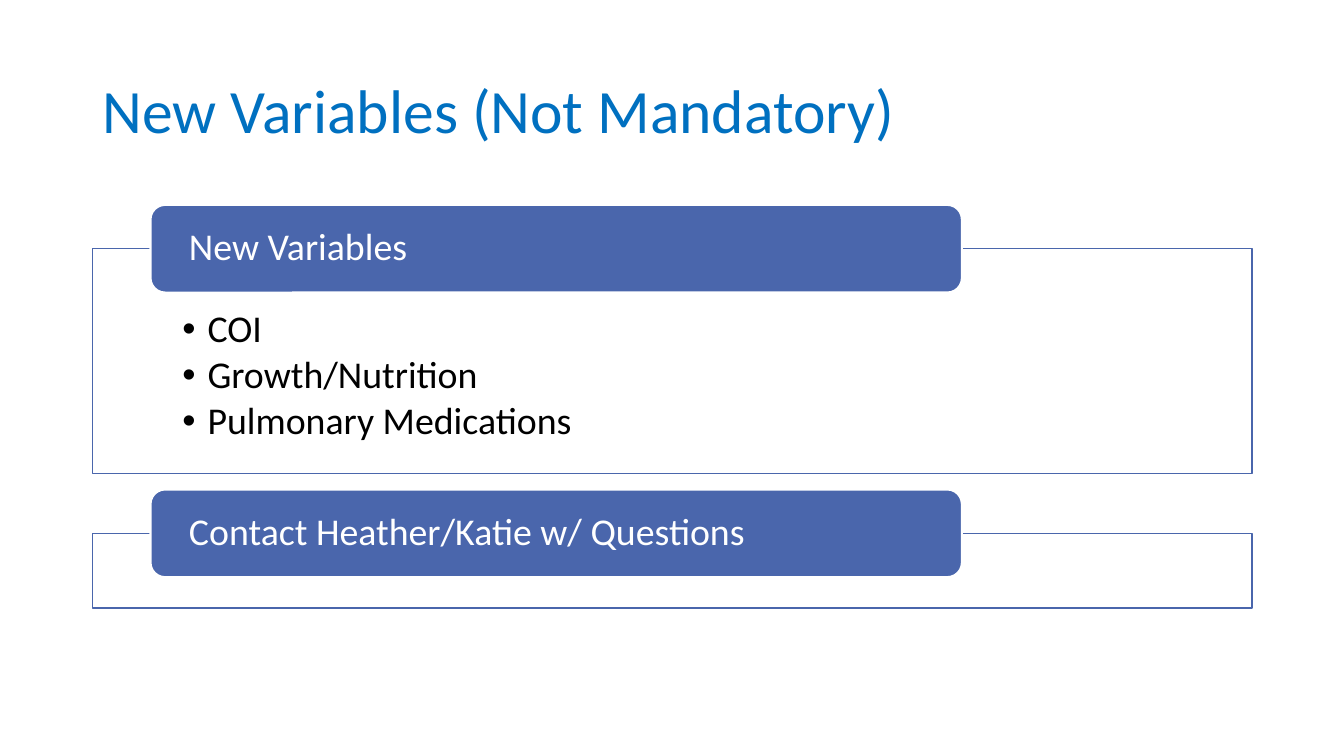
"""Build the slide that lists the new, optional variables."""
from lxml.etree import SubElement
from pptx import Presentation
from pptx.dml.color import RGBColor
from pptx.enum.shapes import MSO_SHAPE
from pptx.enum.text import MSO_ANCHOR, PP_ALIGN
from pptx.oxml.ns import qn
from pptx.util import Inches, Pt

BLUE = RGBColor(0x4A, 0x66, 0xAC)
SKY = RGBColor(0x00, 0x70, 0xC0)
WHITE = RGBColor(0xFF, 0xFF, 0xFF)
BLACK = RGBColor(0x00, 0x00, 0x00)

deck = Presentation()
deck.slide_width, deck.slide_height = Inches(13.33), Inches(7.5)
col, row = deck.slide_width / 100, deck.slide_height / 100
slide = deck.slides.add_slide(deck.slide_layouts[6])


def write(shape, lines, size=27, color=BLACK, anchor=MSO_ANCHOR.MIDDLE,
          left=0.75, top=0, after=0, bullet=False):
    frame = shape.text_frame
    frame.word_wrap = True
    frame.vertical_anchor = anchor
    frame.margin_left = frame.margin_right = int(left * col)
    frame.margin_top = frame.margin_bottom = int(top * row)
    for i, line in enumerate(lines):
        para = frame.paragraphs[0] if i == 0 else frame.add_paragraph()
        para.alignment = PP_ALIGN.LEFT
        para.line_spacing = 0.9
        para.space_after = Pt(after)
        if bullet:
            props = para._p.get_or_add_pPr()
            props.set("marL", str(Inches(0.25)))
            props.set("indent", str(-Inches(0.25)))
            SubElement(props, qn("a:buFont"), typeface="Arial")
            SubElement(props, qn("a:buChar"), char="•")
        run = para.add_run()
        run.text = line
        run.font.name = "Calibri"
        run.font.size = Pt(size)
        run.font.color.rgb = color


def block(kind, x, y, wide, high, fill, line, weight):
    shape = slide.shapes.add_shape(
        kind, int(x * col), int(y * row), int(wide * col), int(high * row))
    shape.shadow.inherit = False
    shape.fill.solid()
    shape.fill.fore_color.rgb = fill
    shape.line.color.rgb = line
    shape.line.width = Pt(weight)
    return shape


edge, span = 6.9, 86.25
title = slide.shapes.add_textbox(
    int(edge * col), int(5.33 * row), int(span * col), int(19.33 * row))
write(title, ["New Variables (Not Mandatory)"], size=44, color=SKY)

groups = [
    ("New Variables", ["COI", "Growth/Nutrition", "Pulmonary Medications"], 29.75),
    ("Contact Heather/Katie w/ Questions", [], 9.9),
]
tab, gap = 11.6, 2.1
y = 27.1
for head, items, high in groups:
    y += tab / 2
    panel = block(MSO_SHAPE.RECTANGLE, edge, y, span, high, WHITE, BLUE, 1)
    write(panel, items, anchor=MSO_ANCHOR.TOP, left=6.67, top=8.13,
          after=3.6, bullet=True)
    label = block(MSO_SHAPE.ROUNDED_RECTANGLE, 11.2, y - tab / 2, 0.7 * span, tab,
                  BLUE, WHITE, 1.5)
    write(label, [head], color=WHITE, left=2.55)
    y += high + gap

deck.save("out.pptx")
